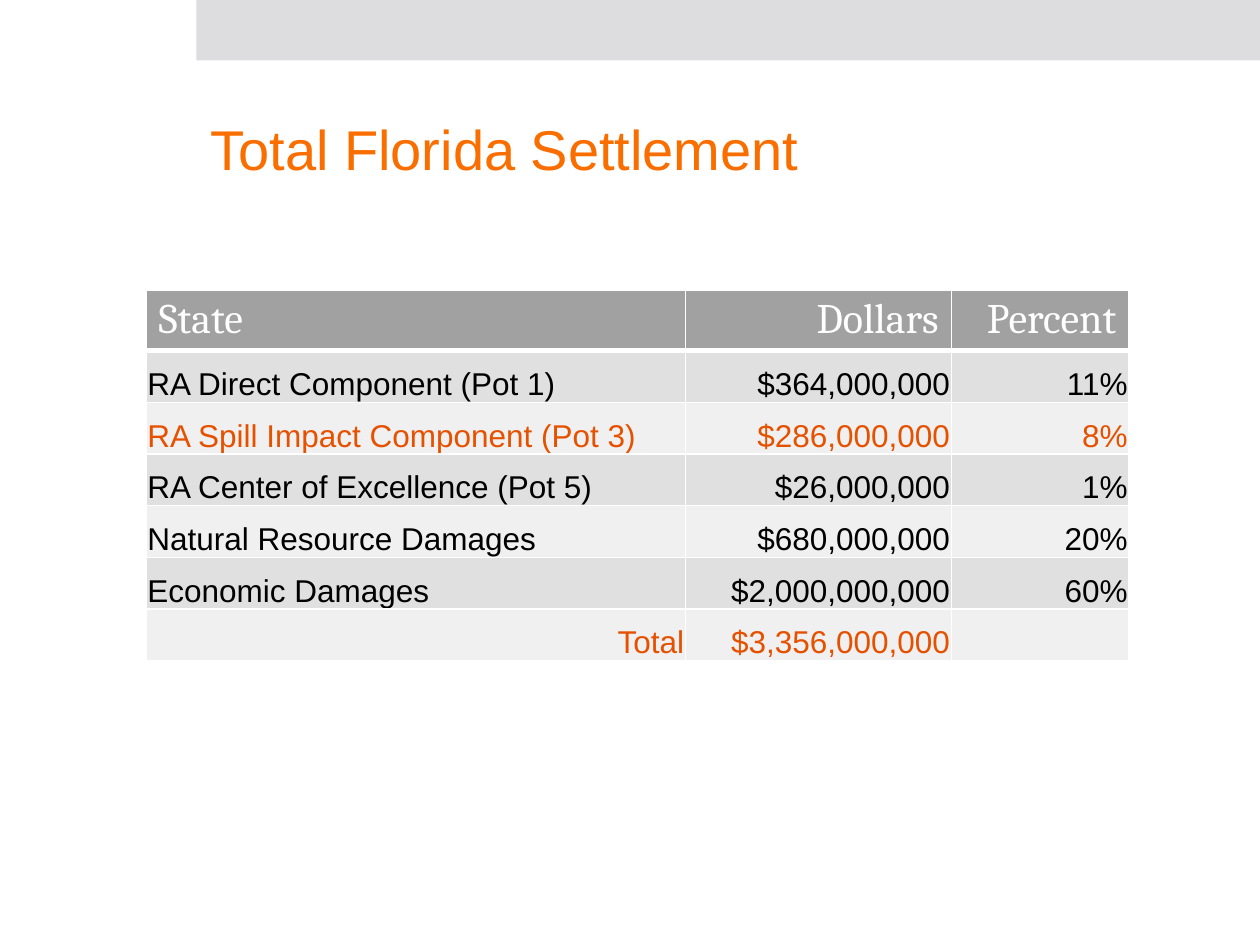
import pptx
import pptx.util
import pptx.dml.color
import pptx.enum.shapes
import pptx.enum.text
import pptx.oxml.ns
import lxml.etree

Inches = pptx.util.Inches
Pt = pptx.util.Pt
ALIGN = pptx.enum.text.PP_ALIGN
ANCHOR = pptx.enum.text.MSO_ANCHOR
qn = pptx.oxml.ns.qn

TITLE = "Total Florida Settlement"
SETTLEMENT = [
    ("State", "Dollars", "Percent"),
    ("RA Direct Component (Pot 1)", "$364,000,000", "11%"),
    ("RA Spill Impact Component (Pot 3)", "$286,000,000", "8%"),
    ("RA Center of Excellence (Pot 5)", "$26,000,000", "1%"),
    ("Natural Resource Damages", "$680,000,000", "20%"),
    ("Economic Damages", "$2,000,000,000", "60%"),
    ("Total", "$3,356,000,000", ""),
]
HIGHLIGHTED_ROWS = (2, 6)
TOTAL_ROW = 6
COLUMN_WIDTHS = (4.28, 2.11, 1.41)
ROW_HEIGHT = 0.41
HEADER_FILL = "A1A1A1"
BAND_FILLS = ("F0F0F0", "E0E0E0")


def color(hex_value):
    return pptx.dml.color.RGBColor.from_string(hex_value)


def style_font(font, name, size, hex_value):
    font.name = name
    font.size = Pt(size)
    font.bold = False
    font.color.rgb = color(hex_value)


def add_borders(cell, row):
    widths = {"L": 1, "R": 1, "T": 3 if row == 1 else 1, "B": 3 if row == 0 else 1}
    properties = cell._tc.get_or_add_tcPr()
    for position, (side, width) in enumerate(widths.items()):
        border = lxml.etree.Element(qn(f"a:ln{side}"), w=str(Pt(width)))
        fill = lxml.etree.SubElement(border, qn("a:solidFill"))
        lxml.etree.SubElement(fill, qn("a:srgbClr"), val="FFFFFF")
        properties.insert(position, border)


def format_cell(cell, text, row, column):
    cell.text = text
    cell.fill.solid()
    cell.fill.fore_color.rgb = color(BAND_FILLS[row % 2] if row else HEADER_FILL)
    paragraph = cell.text_frame.paragraphs[0]
    paragraph.alignment = ALIGN.RIGHT if column or row == TOTAL_ROW else ALIGN.LEFT
    if row == 0:
        style_font(paragraph.font, "Cambria", 24, "FFFFFF")
    else:
        text_color = "E65100" if row in HIGHLIGHTED_ROWS else "000000"
        style_font(paragraph.font, "Arial", 18, text_color)
        cell.vertical_anchor = ANCHOR.BOTTOM
        cell.margin_left = cell.margin_right = cell.margin_top = Inches(0.01)
        cell.margin_bottom = 0
    for run in paragraph.runs:
        style_font(run.font, paragraph.font.name, paragraph.font.size.pt,
                   str(paragraph.font.color.rgb))
    add_borders(cell, row)


def main():
    deck = pptx.Presentation()
    deck.slide_width, deck.slide_height = Inches(10), Inches(7.5)
    slide = deck.slides.add_slide(deck.slide_layouts[5])

    band = slide.shapes.add_shape(
        pptx.enum.shapes.MSO_SHAPE.RECTANGLE,
        Inches(1.56), 0, Inches(8.44), Inches(0.48))
    band.shadow.inherit = False
    band.fill.solid()
    band.fill.fore_color.rgb = color("DDDDDF")
    band.line.fill.background()

    title = slide.shapes.title
    title.left, title.top = Inches(1.57), Inches(0.55)
    title.width, title.height = Inches(7.77), Inches(1.25)
    title.text_frame.text = TITLE
    title.text_frame.vertical_anchor = ANCHOR.MIDDLE
    heading = title.text_frame.paragraphs[0]
    heading.alignment = ALIGN.LEFT
    style_font(heading.runs[0].font, "Arial", 32, "FA6E00")

    table = slide.shapes.add_table(
        len(SETTLEMENT), len(COLUMN_WIDTHS), Inches(1.16), Inches(2.3),
        Inches(sum(COLUMN_WIDTHS)), Inches(ROW_HEIGHT * len(SETTLEMENT))).table
    for column, width in enumerate(COLUMN_WIDTHS):
        table.columns[column].width = Inches(width)
    for row, values in enumerate(SETTLEMENT):
        table.rows[row].height = Inches(ROW_HEIGHT)
        for column, text in enumerate(values):
            format_cell(table.cell(row, column), text, row, column)

    deck.save("out.pptx")


if __name__ == "__main__":
    main()
